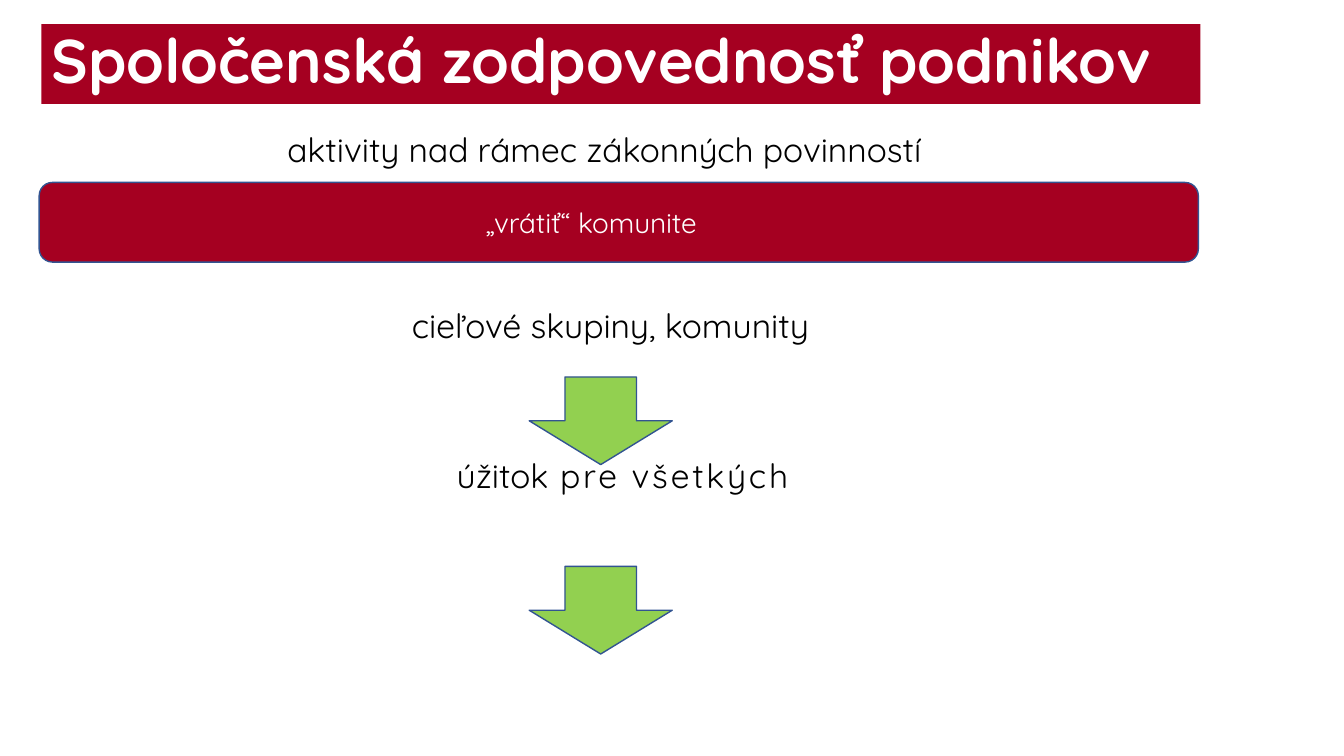
from pptx import Presentation
from pptx.dml.color import RGBColor
from pptx.enum import shapes, text
from pptx.oxml import ns
from pptx.util import Pt

RED, GREEN, OUTLINE = "A50021", "92D050", "325491"
WHITE, BLACK = "FFFFFF", "000000"


def colour(value):
    return RGBColor.from_string(value)


class Page:
    font = "Quicksand"

    def __init__(self, deck):
        self.slide = deck.slides.add_slide(deck.slide_layouts[1])

    def place(self, box, left, top, width, height):
        box.left, box.top, box.width, box.height = map(Pt, (left, top, width, height))

    def style(self, span, size, ink, bold=False, tracking=0):
        """Format one run; tracking is extra letter spacing in points."""
        span.font.name = self.font
        span.font.size = Pt(size)
        span.font.bold = bold
        span.font.color.rgb = colour(ink)
        if tracking:
            span.font._element.set("spc", str(round(tracking * 100)))

    def align_left(self, para, indent=0):
        """Align to the left at an indent, without a bullet."""
        para.alignment = text.PP_ALIGN.LEFT
        properties = para._p.get_or_add_pPr()
        properties.set("marL", str(Pt(indent)))
        properties.set("indent", "0")
        properties.append(properties.makeelement(ns.qn("a:buNone"), {}))

    def title(self, wording, *frame):
        box = self.slide.shapes.title
        self.place(box, *frame)
        box.fill.solid()
        box.fill.fore_color.rgb = colour(RED)
        box.text_frame.text = wording
        box.text_frame.auto_size = text.MSO_AUTO_SIZE.NONE
        box.text_frame.vertical_anchor = text.MSO_ANCHOR.MIDDLE
        para = box.text_frame.paragraphs[0]
        para.line_spacing = 0.9
        self.align_left(para)
        self.style(para.runs[0], 44, WHITE, bold=True)

    def body(self, lines, *frame):
        """Fill the body from (wording, spaced wording, indent, space before, line spacing)."""
        box = self.slide.placeholders[1]
        self.place(box, *frame)
        box.text_frame.text = "\n".join(line[0] for line in lines)
        box.text_frame.auto_size = text.MSO_AUTO_SIZE.NONE
        for para, line in zip(box.text_frame.paragraphs, lines):
            _, spaced, indent, before, spacing = line
            para.space_before = Pt(before)
            para.line_spacing = spacing
            self.align_left(para, indent)
            self.style(para.runs[0], 24, BLACK)
            if spaced:
                span = para.add_run()
                span.text = spaced
                self.style(span, 24, BLACK, tracking=2)

    def shape(self, kind, fill, *frame):
        box = self.slide.shapes.add_shape(kind, *map(Pt, frame))
        box.shadow.inherit = False
        box.fill.solid()
        box.fill.fore_color.rgb = colour(fill)
        box.line.color.rgb = colour(OUTLINE)
        box.line.width = Pt(1)
        return box

    def banner(self, wording, indent, *frame):
        box = self.shape(shapes.MSO_SHAPE.ROUNDED_RECTANGLE, RED, *frame)
        box.text_frame.text = wording
        box.text_frame.vertical_anchor = text.MSO_ANCHOR.MIDDLE
        para = box.text_frame.paragraphs[0]
        self.align_left(para, indent)
        self.style(para.runs[0], 20, WHITE, tracking=-0.1)

    def down_arrow(self, *frame):
        self.shape(shapes.MSO_SHAPE.DOWN_ARROW, GREEN, *frame)


def main():
    deck = Presentation()
    deck.slide_width, deck.slide_height = Pt(960), Pt(540)
    page = Page(deck)
    page.title("Spoločenská zodpovednosť podnikov", 29.5, 17.3, 828, 56.9)
    page.body(
        [
            ("aktivity nad rámec zákonných povinností", "", 170, 0, 1.5),
            ("cieľové skupiny, komunity", "", 259, 100, 0.9),
            ("úžitok", " pre všetkých", 291, 81, 0.9),
        ],
        28, 74.2, 903, 465.8,
    )
    page.banner("„vrátiť“ komunite", 309, 28, 130.3, 828, 56.9)
    for top in (269.3, 404.6):
        page.down_arrow(378, top, 102.2, 62.6)
    deck.save("out.pptx")


if __name__ == "__main__":
    main()
